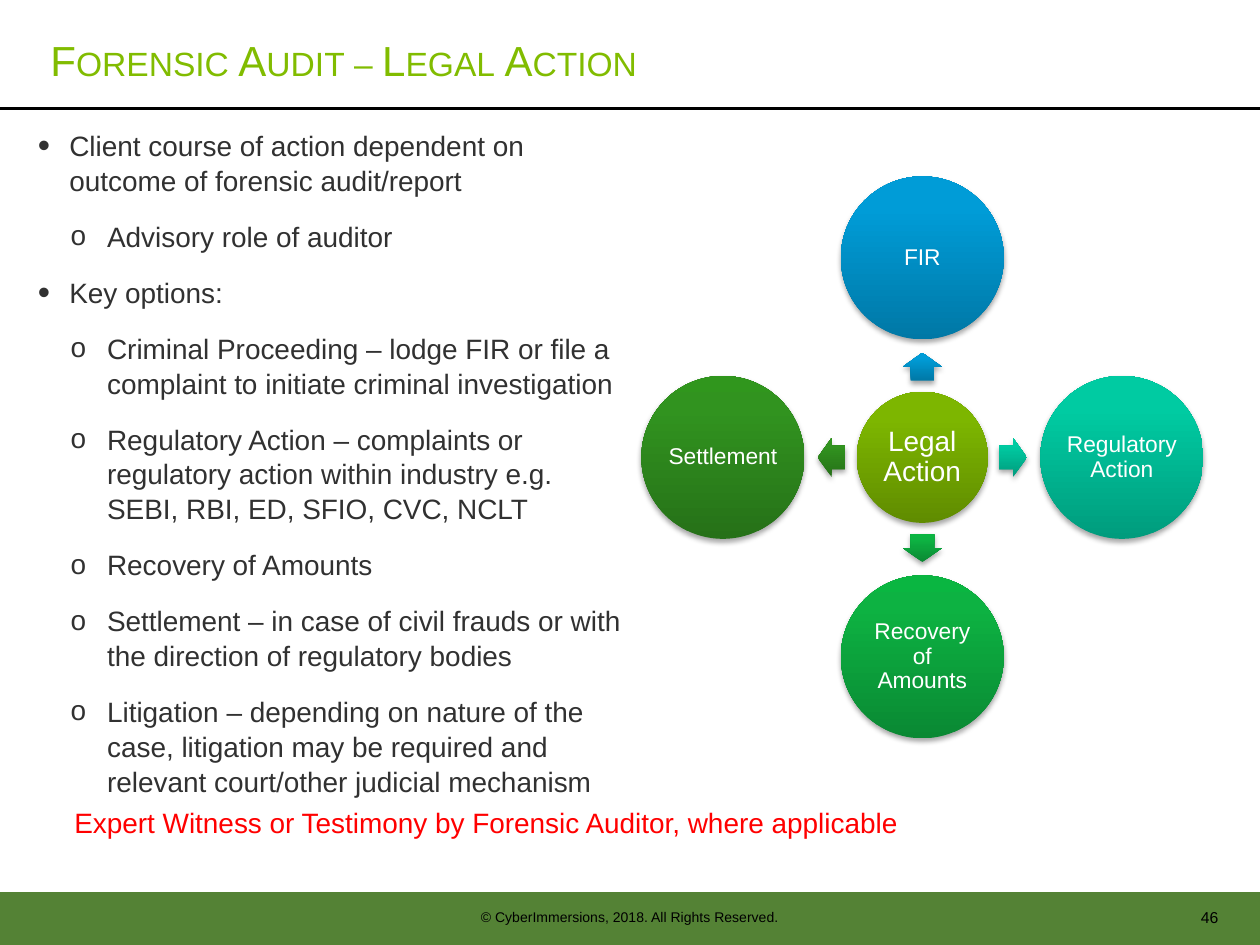
from collections import namedtuple
from dataclasses import dataclass
from math import cos, radians, sin

from lxml import etree
from pptx import Presentation
from pptx.dml.color import RGBColor
from pptx.enum.shapes import MSO_CONNECTOR, MSO_SHAPE
from pptx.enum.text import MSO_ANCHOR, MSO_AUTO_SIZE, PP_ALIGN
from pptx.oxml import parse_xml
from pptx.oxml.ns import qn
from pptx.util import Inches, Pt

OVAL, ARROW, RECT = MSO_SHAPE.OVAL, MSO_SHAPE.RIGHT_ARROW, MSO_SHAPE.RECTANGLE
LINE = MSO_CONNECTOR.STRAIGHT
TOP, MIDDLE = MSO_ANCHOR.TOP, MSO_ANCHOR.MIDDLE
LEFT, CENTER, RIGHT = PP_ALIGN.LEFT, PP_ALIGN.CENTER, PP_ALIGN.RIGHT
NO_FIT = MSO_AUTO_SIZE.NONE
NS = 'xmlns:a="http://schemas.openxmlformats.org/drawingml/2006/main"'

Box = namedtuple("Box", "x y w h")


@dataclass(frozen=True)
class Theme:
    face: str = "Arial"
    title: str = "81BC00"
    body: str = "313131"
    note: str = "FF0000"
    dark: str = "000000"
    light: str = "FFFFFF"
    band: str = "548235"
    # Gradient colours from bottom to top
    lime: tuple = ("608C00", "7DB600", "7EB700")
    blue: tuple = ("0078A6", "009CD7", "009DD8")
    teal: tuple = ("009C7D", "00CBA2", "00CCA3")
    green: tuple = ("0A8933", "0DB242", "0AB641")
    moss: tuple = ("267118", "31931F", "30961D")
    head_pt: int = 24
    text_pt: int = 16
    node_pt: int = 13
    page_pt: int = 9
    foot_pt: int = 8


THEME = Theme()

ITEMS = [
    (0, "Client course of action dependent on outcome of forensic audit/report"),
    (1, "Advisory role of auditor"),
    (0, "Key options:"),
    (1, "Criminal Proceeding – lodge FIR or file a complaint to initiate "
        "criminal investigation"),
    (1, "Regulatory Action – complaints or regulatory action within industry "
        "e.g. SEBI, RBI, ED, SFIO, CVC, NCLT"),
    (1, "Recovery of Amounts"),
    (1, "Settlement – in case of civil frauds or with the direction of "
        "regulatory bodies"),
    (1, "Litigation – depending on nature of the case, litigation may be "
        "required and relevant court/other judicial mechanism"),
]

# Label, colours and clockwise angle from the right
NODES = [
    ("FIR", THEME.blue, 270),
    ("Regulatory Action", THEME.teal, 0),
    ("Recovery of Amounts", THEME.green, 90),
    ("Settlement", THEME.moss, 180),
]


def inches(box):
    return [Inches(v) for v in box]


def place(shape, box):
    shape.left, shape.top, shape.width, shape.height = inches(box)


def set_font(para, size, color):
    font = para.font
    font.name, font.size = THEME.face, Pt(size)
    font.color.rgb = RGBColor.from_string(color)
    return font


def set_frame(frame, anchor=TOP, inset=0):
    frame.word_wrap = True
    frame.auto_size = NO_FIT
    frame.vertical_anchor = anchor
    frame.margin_left = frame.margin_right = Inches(inset)
    frame.margin_top = frame.margin_bottom = Inches(inset)


def label(slide, box, text, size, color, align=LEFT, anchor=TOP):
    frame = slide.shapes.add_textbox(*inches(box)).text_frame
    set_frame(frame, anchor)
    para = frame.paragraphs[0]
    para.text, para.alignment = text, align
    set_font(para, size, color)


def title(slide, box):
    shape = slide.shapes.title
    place(shape, box)
    set_frame(shape.text_frame, MIDDLE)
    para = shape.text_frame.paragraphs[0]
    para.text, para.alignment = "Forensic Audit – Legal Action", LEFT
    set_font(para, THEME.head_pt, THEME.title)
    para.runs[0].font._element.set("cap", "small")


def bullet(para, level):
    """Set the indent and mark of a list level."""
    left, hang, mark, scale = [(0.51, 0.25, "•", 125), (0.81, 0.29, "o", 100)][level]
    props = para._p.get_or_add_pPr()
    props.set("marL", str(Inches(left)))
    props.set("indent", str(-Inches(hang)))
    etree.SubElement(props, qn("a:buSzPct")).set("val", str(scale * 1000))
    etree.SubElement(props, qn("a:buFont")).set("typeface", THEME.face)
    etree.SubElement(props, qn("a:buChar")).set("char", mark)


def options(slide, box):
    shape = slide.placeholders[1]
    place(shape, box)
    frame = shape.text_frame
    set_frame(frame)
    for i, (level, text) in enumerate(ITEMS):
        para = frame.add_paragraph() if i else frame.paragraphs[0]
        para.text, para.level = text, level
        para.space_before = Pt(12 if i else 0)
        para.line_spacing = 1.04
        bullet(para, level)
        set_font(para, THEME.text_pt, THEME.body)


def glossy(group, kind, mid, size, colors):
    """Add a shape centred on mid with an upward gradient and a soft shadow."""
    (x, y), (w, h) = mid, size
    shape = group.shapes.add_shape(kind, *inches((x - w / 2, y - h / 2, w, h)))
    shape.line.fill.background()
    stops = "".join(
        f'<a:gs pos="{pos}"><a:srgbClr val="{color}"/></a:gs>'
        for pos, color in zip((0, 80000, 100000), colors))
    fill = parse_xml(
        f'<a:gradFill {NS} rotWithShape="0"><a:gsLst>{stops}</a:gsLst>'
        '<a:lin ang="16200000" scaled="0"/></a:gradFill>')
    shadow = parse_xml(
        f'<a:effectLst {NS}><a:outerShdw blurRad="{Pt(3.1)}" dist="{Pt(1.8)}" '
        'dir="5400000" rotWithShape="0"><a:srgbClr val="000000">'
        '<a:alpha val="35000"/></a:srgbClr></a:outerShdw></a:effectLst>')
    props = shape._element.spPr
    props.find(qn("a:prstGeom")).addnext(fill)
    props.append(shadow)
    return shape


def disc(group, mid, width, text, colors, size):
    shape = glossy(group, OVAL, mid, (width, width), colors)
    set_frame(shape.text_frame, MIDDLE, 0.02)
    para = shape.text_frame.paragraphs[0]
    para.text, para.alignment, para.line_spacing = text, CENTER, 0.9
    set_font(para, size, THEME.light)


def wheel(slide, box):
    """Draw the hub with an arrow to each outer disc."""
    group = slide.shapes.add_group_shape()
    x, y = box.x + box.w / 2, box.y + box.h / 2
    node = box.w * 0.29
    reach = (box.w - node) / 2
    disc(group, (x, y), 1.04, "Legal Action", THEME.lime, THEME.text_pt)
    for text, colors, angle in NODES:
        dx, dy = cos(radians(angle)), sin(radians(angle))
        near = (x + 0.72 * dx, y + 0.72 * dy)
        arrow = glossy(group, ARROW, near, (0.22, 0.31), colors)
        arrow.adjustments[0], arrow.adjustments[1] = 0.6, 0.5
        arrow.rotation = angle
        far = (x + reach * dx, y + reach * dy)
        disc(group, far, node, text, colors, THEME.node_pt)


def footer(slide, box):
    band = slide.shapes.add_shape(RECT, *inches(box))
    band.shadow.inherit = False
    band.fill.solid()
    band.fill.fore_color.rgb = RGBColor.from_string(THEME.band)
    band.line.fill.background()
    label(slide, Box(box.x + 3.62, box.y + 0.08, 2.76, 0.24),
          "© CyberImmersions, 2018. All Rights Reserved.",
          THEME.foot_pt, THEME.dark, CENTER, MIDDLE)
    label(slide, Box(box.x + 8.8, box.y + 0.06, 0.87, 0.28), "46",
          THEME.page_pt, THEME.dark, RIGHT, MIDDLE)


def rule(slide, box):
    line = slide.shapes.add_connector(
        LINE, *inches((box.x, box.y, box.x + box.w, box.y)))
    line.line.width = Pt(1.5)
    line.line.color.rgb = RGBColor.from_string(THEME.dark)
    etree.SubElement(line._element.spPr, qn("a:effectLst"))


def main():
    deck = Presentation()
    deck.slide_width, deck.slide_height = Inches(10), Inches(7.5)
    slide = deck.slides.add_slide(deck.slide_layouts[1])
    footer(slide, Box(0, 7.08, 10, 0.42))
    rule(slide, Box(0, 0.86, 10, 0))
    title(slide, Box(0.4, 0.22, 7.94, 0.51))
    options(slide, Box(0.04, 1.01, 4.96, 5.26))
    wheel(slide, Box(5.09, 1.4, 4.46, 4.46))
    label(slide, Box(0.59, 6.39, 9.14, 0.28),
          "Expert Witness or Testimony by Forensic Auditor, where applicable",
          THEME.text_pt, THEME.note)
    deck.save("out.pptx")


if __name__ == "__main__":
    main()
